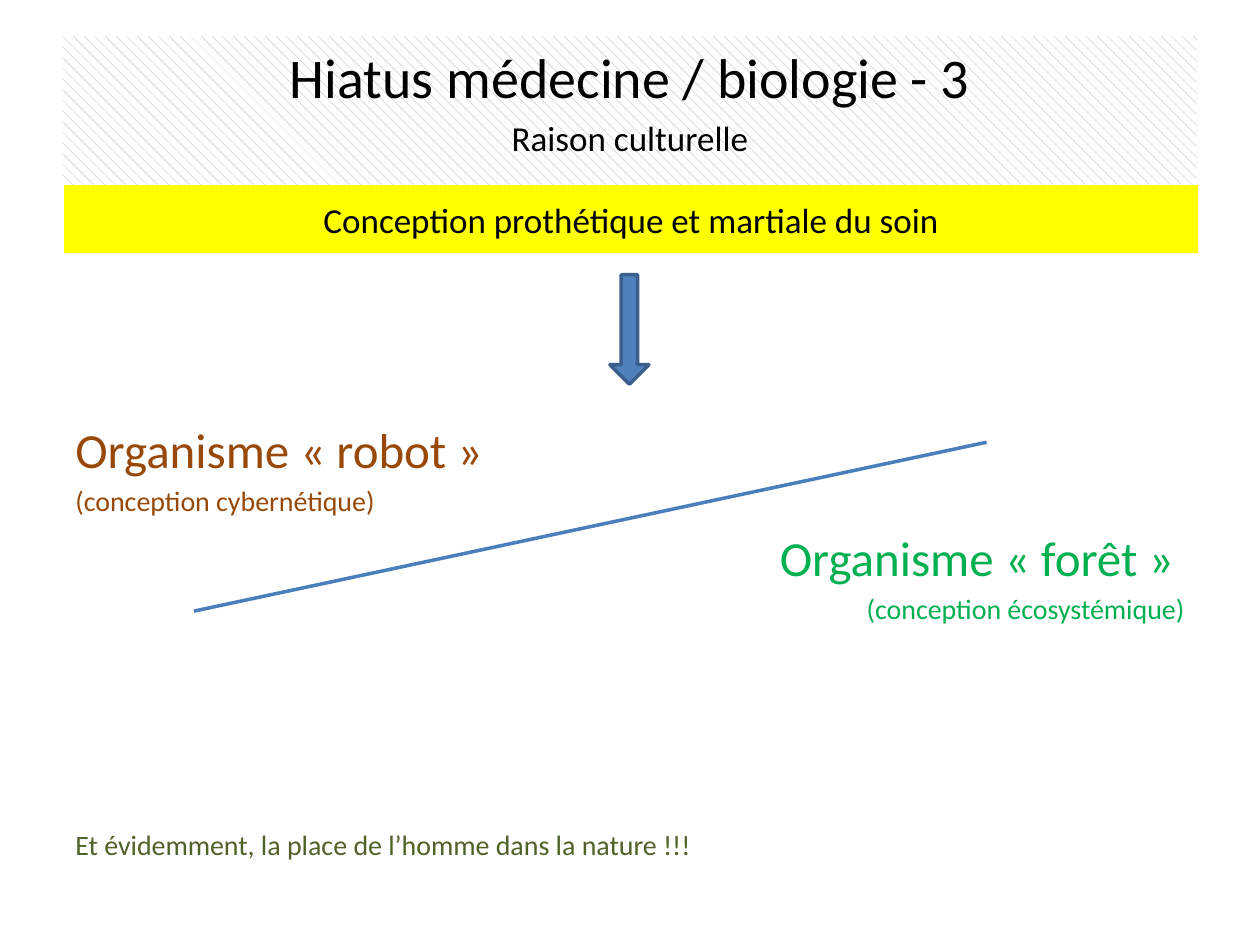
from pptx import Presentation
from pptx.util import Inches, Pt
from pptx.dml.color import RGBColor
from pptx.enum.dml import MSO_PATTERN
from pptx.enum.shapes import MSO_SHAPE as Shape, MSO_CONNECTOR as Connector
from pptx.enum.text import PP_ALIGN as Align, MSO_ANCHOR as Anchor
from lxml import etree

THEME = {
    "font": "Calibri",
    "title": 32, "heading": 28, "subtitle": 20, "detail": 16,
    "black": "000000", "white": "FFFFFF", "hatch": "A6A6A6",
    "yellow": "FFFF00", "brown": "984807", "green": "00B050", "olive": "4F6228",
    "arrow": "4F81BD", "arrow_edge": "3A5F8C", "divider": "4B7EBC",
    "line_width": 2,
}

TITLE = [
    ("Hiatus médecine / biologie - 3", "title", "black", Align.CENTER),
    ("Raison culturelle", "subtitle", "black", Align.CENTER),
]
BANNER = [("Conception prothétique et martiale du soin", "subtitle", "black", Align.CENTER)]
ORGANISMS = [
    ("Organisme « robot »", "heading", "brown", Align.LEFT),
    ("(conception cybernétique)", "detail", "brown", Align.LEFT),
    ("Organisme « forêt » ", "heading", "green", Align.RIGHT),
    ("(conception écosystémique)", "detail", "green", Align.RIGHT),
]
CLOSING = [("Et évidemment, la place de l’homme dans la nature !!!", "detail", "olive", Align.LEFT)]

TITLE_BOX = (0.5, 0.29, 9, 1.18)
BANNER_BOX = (0.51, 1.47, 9, 0.54)
ARROW_BOX = (4.84, 2.18, 0.31, 0.87)
ORGANISMS_BOX = (0.5, 3.28, 9, 1.8)
CLOSING_BOX = (0.5, 6.52, 9, 0.4)
DIVIDER = (1.54, 4.85, 7.83, 3.51)


def color(name):
    return RGBColor.from_string(THEME[name])


def inches(values):
    return [Inches(v) for v in values]


def write(s, lines, anchor=Anchor.TOP):
    tf = s.text_frame
    tf.word_wrap = True
    tf.vertical_anchor = anchor
    tf.text = "\n".join(text for text, *_ in lines)
    for p, (_, size, ink, align) in zip(tf.paragraphs, lines):
        p.alignment = align
        p.space_before = Pt(round(THEME[size] * 0.2, 1))
        font = p.runs[0].font
        font.name = THEME["font"]
        font.size = Pt(THEME[size])
        font.color.rgb = color(ink)


def add_shape(slide, kind, box):
    s = slide.shapes.add_shape(kind, *inches(box))
    s.shadow.inherit = False
    s.line.fill.background()
    return s


def set_line(s, name):
    s.line.color.rgb = color(name)
    s.line.width = Pt(THEME["line_width"])


def main():
    prs = Presentation()
    prs.slide_width, prs.slide_height = Inches(10), Inches(7.5)
    slide = prs.slides.add_slide(prs.slide_layouts[6])

    for box, lines in ((ORGANISMS_BOX, ORGANISMS), (CLOSING_BOX, CLOSING)):
        write(slide.shapes.add_textbox(*inches(box)), lines)

    banner = add_shape(slide, Shape.RECTANGLE, BANNER_BOX)
    banner.fill.solid()
    banner.fill.fore_color.rgb = color("yellow")
    write(banner, BANNER, Anchor.MIDDLE)

    divider = slide.shapes.add_connector(Connector.STRAIGHT, *inches(DIVIDER))
    set_line(divider, "divider")
    sp_pr = divider._element.spPr
    etree.SubElement(sp_pr, "{http://schemas.openxmlformats.org/drawingml/2006/main}effectLst")

    arrow = add_shape(slide, Shape.DOWN_ARROW, ARROW_BOX)
    arrow.adjustments[0] = 0.42
    arrow.adjustments[1] = 0.5
    arrow.fill.solid()
    arrow.fill.fore_color.rgb = color("arrow")
    set_line(arrow, "arrow_edge")

    title = add_shape(slide, Shape.RECTANGLE, TITLE_BOX)
    title.fill.patterned()
    title.fill.pattern = MSO_PATTERN.DASHED_DOWNWARD_DIAGONAL
    title.fill.fore_color.rgb = color("hatch")
    title.fill.back_color.rgb = color("white")
    write(title, TITLE)

    prs.save("out.pptx")


if __name__ == "__main__":
    main()
